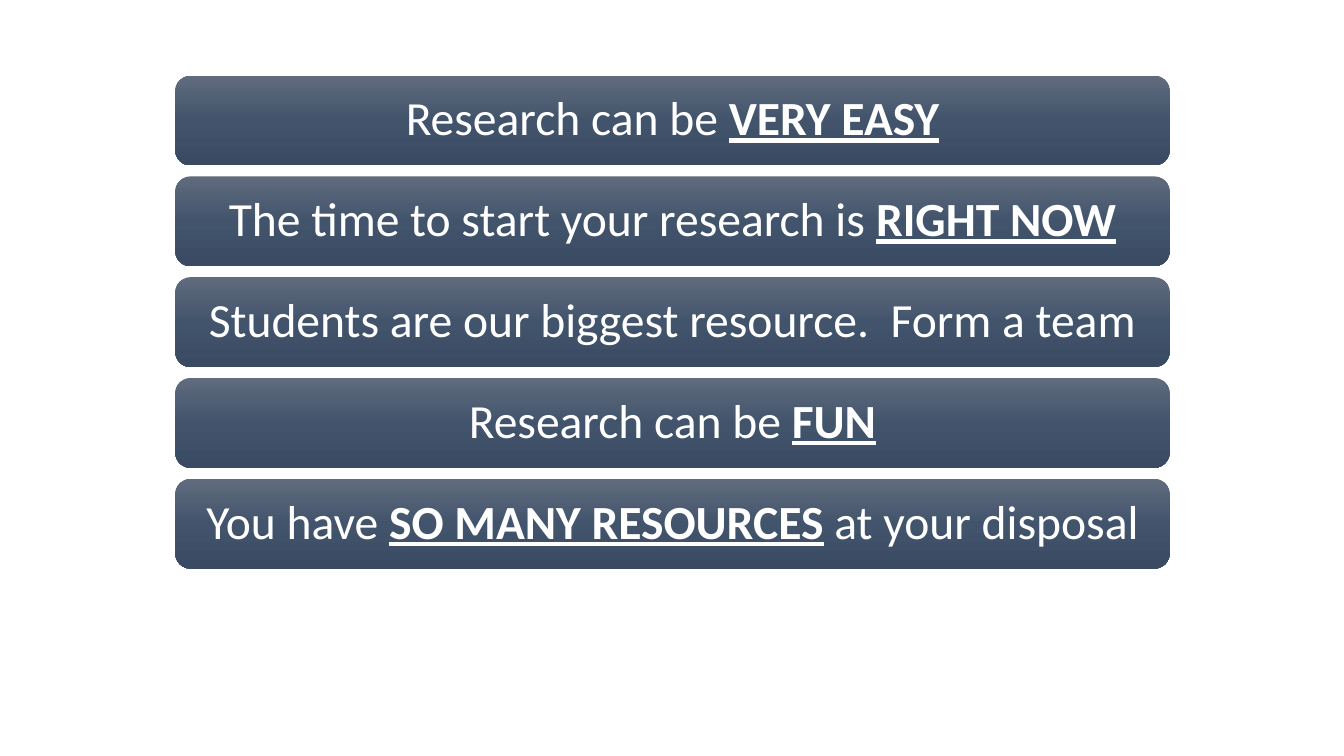
from copy import deepcopy
from dataclasses import dataclass

from pptx import Presentation
from pptx.dml.color import RGBColor
from pptx.enum.shapes import MSO_SHAPE
from pptx.enum.text import MSO_ANCHOR, PP_ALIGN
from pptx.oxml.ns import qn
from pptx.shapes.autoshape import Shape
from pptx.slide import Slide
from pptx.util import Inches, Pt

LEFT, TOP, WIDTH, HEIGHT = 1.74, 0.75, 9.86, 0.89
PITCH = 1.0
GRADIENT = [(0, "606B7D"), (0.5, "42546C"), (1, "394A62")]
INSET = Inches(0.14)
FRAME_FORMAT = {
    "word_wrap": True,
    "vertical_anchor": MSO_ANCHOR.MIDDLE,
    "margin_left": INSET,
    "margin_right": INSET,
    "margin_top": INSET,
    "margin_bottom": INSET,
}
PARAGRAPH_FORMAT = {"alignment": PP_ALIGN.CENTER, "line_spacing": 0.9}
FONT_FORMAT = {"name": "Calibri", "size": Pt(34)}


@dataclass
class Bar:
    before: str
    stressed: str = ""
    after: str = ""


BARS = [
    Bar("Research can be ", "VERY EASY"),
    Bar("The time to start your research is ", "RIGHT NOW"),
    Bar("Students are our biggest resource.  Form a team"),
    Bar("Research can be ", "FUN"),
    Bar("You have ", "SO MANY RESOURCES", " at your disposal"),
]


def color(value: str) -> RGBColor:
    return RGBColor.from_string(value)


def apply(target: object, values: dict) -> None:
    """Set each named attribute of target."""
    for name, value in values.items():
        setattr(target, name, value)


def fill_gradient(s: Shape) -> None:
    """Fill from top to bottom with the three gradient stops."""
    s.fill.gradient()
    s.fill.gradient_angle = 270
    stops = s.element.spPr.find(".//" + qn("a:gsLst"))
    stops.append(deepcopy(stops[0]))
    for stop, (position, value) in zip(s.fill.gradient_stops, GRADIENT):
        stop.position = position
        stop.color.rgb = color(value)


def write_text(s: Shape, bar: Bar) -> None:
    tf = s.text_frame
    apply(tf, FRAME_FORMAT)
    p = tf.paragraphs[0]
    apply(p, PARAGRAPH_FORMAT)
    for text, strong in ((bar.before, False), (bar.stressed, True), (bar.after, False)):
        if text:
            r = p.add_run()
            r.text = text
            apply(r.font, FONT_FORMAT | {"bold": strong, "underline": strong})
            r.font.color.rgb = color("FFFFFF")


def add_bar(slide: Slide, bar: Bar, top: float) -> None:
    s = slide.shapes.add_shape(
        MSO_SHAPE.ROUNDED_RECTANGLE,
        Inches(LEFT), Inches(top), Inches(WIDTH), Inches(HEIGHT),
    )
    s.shadow.inherit = False
    s.line.fill.background()
    fill_gradient(s)
    write_text(s, bar)


def main() -> None:
    prs = Presentation()
    prs.slide_width, prs.slide_height = Inches(13.33), Inches(7.5)
    slide = prs.slides.add_slide(prs.slide_layouts[6])
    for row, bar in enumerate(BARS):
        add_bar(slide, bar, TOP + row * PITCH)
    prs.save("out.pptx")


if __name__ == "__main__":
    main()
